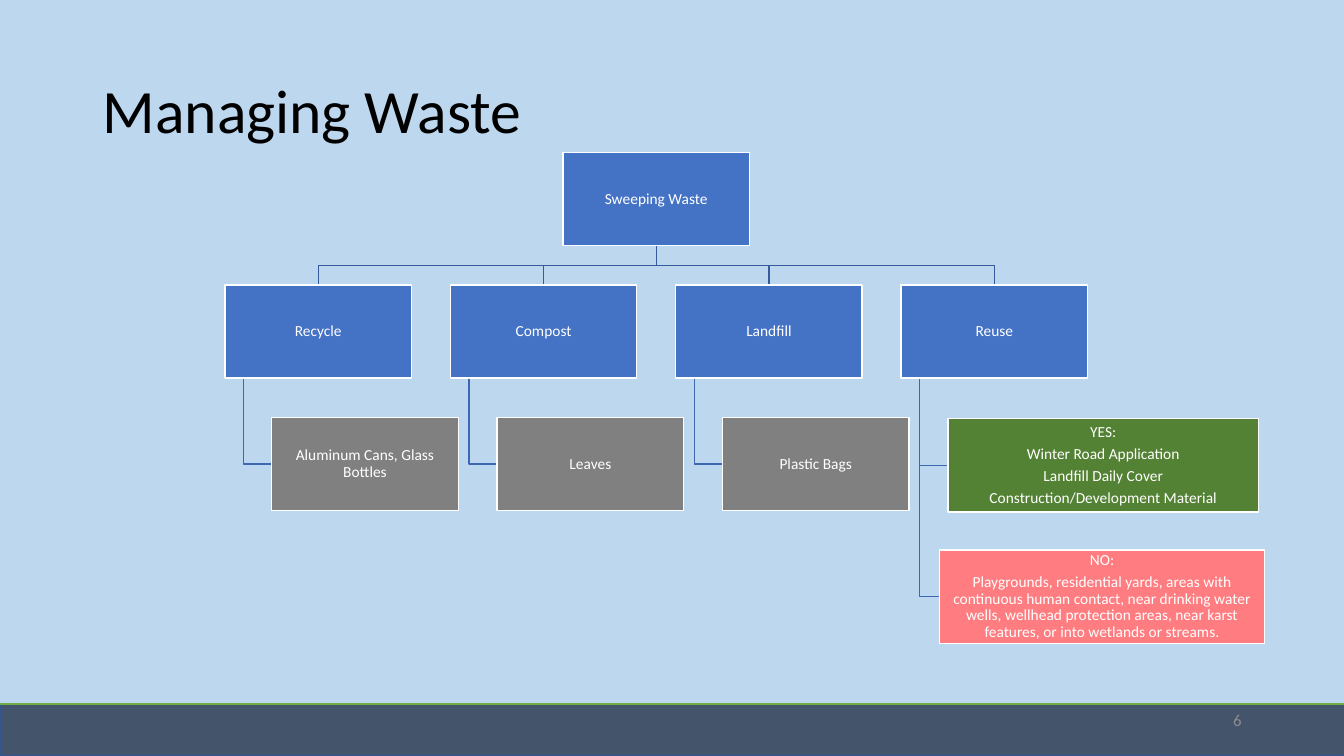
"""Build the Managing Waste slide: an organisation chart of sweeping waste."""
from dataclasses import dataclass

from pptx import Presentation
from pptx.dml.color import RGBColor
from pptx.enum.shapes import MSO_CONNECTOR, MSO_SHAPE
from pptx.enum.text import MSO_ANCHOR as Anchor, PP_ALIGN as Align
from pptx.oxml.ns import qn
from pptx.slide import Slide
from pptx.text.text import TextFrame
from pptx.util import Cm, Pt


@dataclass(frozen=True)
class Theme:
    font: str = "Calibri"
    title_size: float = 44
    number_size: float = 12
    box_size: float = 11
    paragraph_gap: float = 3.8
    background: str = "BDD7EE"
    footer: str = "44546A"
    footer_edge: str = "325491"
    accent: str = "70AD47"
    title: str = "000000"
    number: str = "8C8C8C"
    white: str = "FFFFFF"
    category: str = "4472C4"
    material: str = "808080"
    allowed: str = "548235"
    banned: str = "FF7C80"
    branch: str = "365B9D"
    twig: str = "3E67B2"


@dataclass(frozen=True)
class Box:
    paragraphs: tuple[str, ...]
    left: float
    top: float
    fill: str
    width: float = 4.7
    height: float = 2.35

    @property
    def center(self) -> float:
        return self.left + self.width / 2

    @property
    def middle(self) -> float:
        return self.top + self.height / 2

    @property
    def bottom(self) -> float:
        return self.top + self.height


THEME = Theme()
SLIDE_WIDTH, SLIDE_HEIGHT = 33.87, 19.05
FOOTER_TOP = 17.75
FIRST_LEFT, COLUMN_PITCH = 5.67, 5.68
ROOT_TOP, ROW_PITCH = 3.84, 3.34
CHILD_INDENT, TRUNK_INDENT = 1.18, 0.47
CATEGORY_TOP, MATERIAL_TOP, BANNED_TOP = (ROOT_TOP + row * ROW_PITCH for row in (1, 2, 3))

ROOT = Box(("Sweeping Waste",), 14.19, ROOT_TOP, THEME.category)
CATEGORIES = [
    Box((name,), FIRST_LEFT + column * COLUMN_PITCH, CATEGORY_TOP, THEME.category)
    for column, name in enumerate(("Recycle", "Compost", "Landfill", "Reuse"))
]
MATERIALS = [
    Box((name,), category.left + CHILD_INDENT, MATERIAL_TOP, THEME.material)
    for category, name in zip(
        CATEGORIES, ("Aluminum Cans, Glass Bottles", "Leaves", "Plastic Bags")
    )
]
REUSE = CATEGORIES[-1]
ALLOWED = Box(
    (
        "YES:",
        "Winter Road Application",
        "Landfill Daily Cover",
        "Construction/Development Material",
    ),
    REUSE.left + CHILD_INDENT, 10.55, THEME.allowed, width=7.83,
)
BANNED = Box(
    (
        "NO:",
        "Playgrounds, residential yards, areas with continuous human contact, "
        "near drinking water wells, wellhead protection areas, near karst "
        "features, or into wetlands or streams.",
    ),
    23.68, BANNED_TOP, THEME.banned, width=8.19,
)


def write(
    frame: TextFrame, paragraphs: tuple[str, ...], size: float, color: str, align: Align
) -> None:
    """Fill a frame with paragraphs of one style."""
    frame.word_wrap = True
    frame.vertical_anchor = Anchor.MIDDLE
    frame.text = "\n".join(paragraphs)
    for paragraph in frame.paragraphs:
        paragraph.alignment = align
        paragraph.line_spacing = 0.9
        paragraph.font.name = THEME.font
        paragraph.font.size = Pt(size)
        paragraph.font.color.rgb = RGBColor.from_string(color)


def add_rectangle(slide: Slide, box: Box, edge: str) -> TextFrame:
    """Draw a filled rectangle and return its text frame."""
    rectangle = slide.shapes.add_shape(
        MSO_SHAPE.RECTANGLE, Cm(box.left), Cm(box.top), Cm(box.width), Cm(box.height)
    )
    rectangle.shadow.inherit = False
    rectangle.fill.solid()
    rectangle.fill.fore_color.rgb = RGBColor.from_string(box.fill)
    rectangle.line.color.rgb = RGBColor.from_string(edge)
    rectangle.line.width = Pt(1)
    return rectangle.text_frame


def add_box(slide: Slide, box: Box) -> None:
    """Draw a chart box with its wording."""
    frame = add_rectangle(slide, box, THEME.white)
    frame.margin_left = frame.margin_right = Cm(0.02)
    frame.margin_top = frame.margin_bottom = Cm(0.02)
    write(frame, box.paragraphs, THEME.box_size, THEME.white, Align.CENTER)
    for paragraph in frame.paragraphs:
        paragraph.space_after = Pt(THEME.paragraph_gap)


def add_elbow(slide: Slide, points: list[tuple[float, float]], color: str) -> None:
    """Draw an open angled line through the points."""
    start, *corners = [(Cm(x), Cm(y)) for x, y in points]
    builder = slide.shapes.build_freeform(*start)
    builder.add_line_segments(corners, close=False)
    elbow = builder.convert_to_shape()
    elbow.shadow.inherit = False
    elbow.fill.background()
    elbow.line.color.rgb = RGBColor.from_string(color)
    elbow.line.width = Pt(1)


def add_branch(slide: Slide, parent: Box, child: Box) -> None:
    """Link a parent's bottom to the top of a box in the next row."""
    turn = (parent.bottom + child.top) / 2
    add_elbow(
        slide,
        [
            (parent.center, parent.bottom),
            (parent.center, turn),
            (child.center, turn),
            (child.center, child.top),
        ],
        THEME.branch,
    )


def add_twig(slide: Slide, parent: Box, child: Box) -> None:
    """Link a parent's bottom to the left side of a hanging box."""
    trunk = parent.left + TRUNK_INDENT
    add_elbow(
        slide,
        [(trunk, parent.bottom), (trunk, child.middle), (child.left, child.middle)],
        THEME.twig,
    )


def add_frame(slide: Slide) -> None:
    """Draw the background, footer, title and slide number."""
    slide.background.fill.solid()
    slide.background.fill.fore_color.rgb = RGBColor.from_string(THEME.background)
    footer = Box((), 0, FOOTER_TOP, THEME.footer, SLIDE_WIDTH, SLIDE_HEIGHT - FOOTER_TOP)
    add_rectangle(slide, footer, THEME.footer_edge)
    rule = slide.shapes.add_connector(
        MSO_CONNECTOR.STRAIGHT, 0, Cm(17.73), Cm(SLIDE_WIDTH), Cm(17.73)
    )
    rule.line.color.rgb = RGBColor.from_string(THEME.accent)
    rule.line.width = Pt(1.5)
    properties = rule._element.spPr
    properties.append(properties.makeelement(qn("a:effectLst"), {}))

    title = slide.shapes.title
    title.left, title.top, title.width, title.height = Cm(2.33), Cm(1.01), Cm(29.21), Cm(3.68)
    write(title.text_frame, ("Managing Waste",), THEME.title_size, THEME.title, Align.LEFT)
    number = slide.shapes.add_textbox(Cm(23.92), Cm(17.66), Cm(7.62), Cm(1.01))
    write(number.text_frame, ("6",), THEME.number_size, THEME.number, Align.RIGHT)


def main() -> None:
    """Build and save the slide."""
    deck = Presentation()
    deck.slide_width, deck.slide_height = Cm(SLIDE_WIDTH), Cm(SLIDE_HEIGHT)
    slide = deck.slides.add_slide(deck.slide_layouts[5])
    add_frame(slide)
    for category in CATEGORIES:
        add_branch(slide, ROOT, category)
    hanging = [*zip(CATEGORIES, MATERIALS), (REUSE, ALLOWED), (REUSE, BANNED)]
    for category, child in hanging:
        add_twig(slide, category, child)
    for box in (ROOT, *CATEGORIES, *MATERIALS, ALLOWED, BANNED):
        add_box(slide, box)
    deck.save("out.pptx")


if __name__ == "__main__":
    main()
